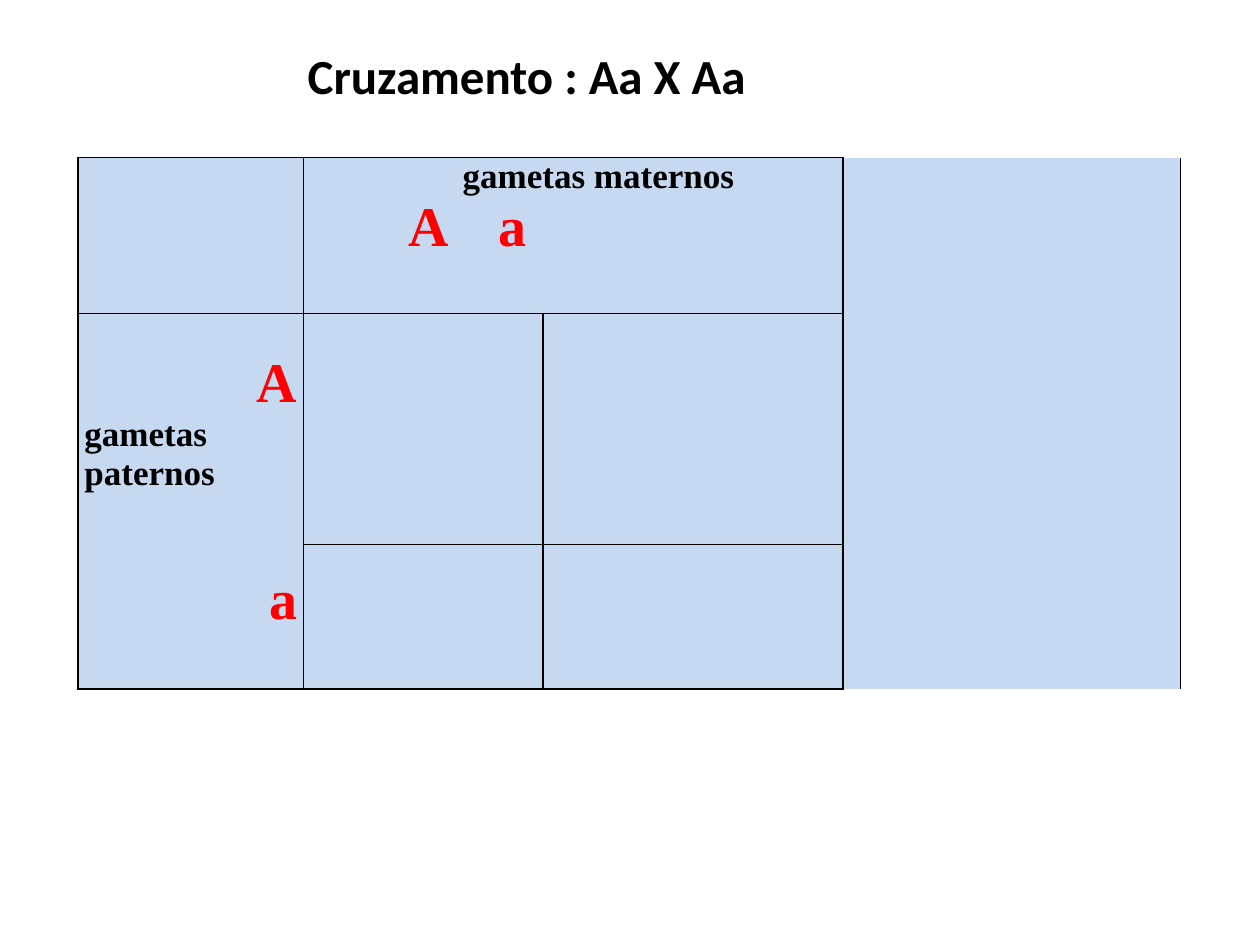
from pptx import Presentation
from pptx import util as u
from pptx.dml.color import RGBColor
from pptx.enum import text
from pptx.oxml.ns import qn
from lxml import etree

COLORS = {"ink": "000000", "allele": "FF0000", "cell": "C6D9F1"}
SERIF = "Times New Roman"
TITLE = "Cruzamento : Aa X Aa"
LABEL = dict(size=20, color="ink")
ALLELE = dict(size=32, color="allele")
LEFT, CENTER, RIGHT = text.PP_ALIGN.LEFT, text.PP_ALIGN.CENTER, text.PP_ALIGN.RIGHT

MATERNAL = [
    ("gametas maternos", dict(LABEL, align=CENTER, indent=0.4)),
    ("A\ta", dict(ALLELE, indent=0.78, tab=3.18)),
]
PATERNAL = [
    ("A", dict(ALLELE, align=RIGHT)),
    ("gametas paternos", LABEL),
    ("a", dict(ALLELE, align=RIGHT, before=44)),
]
COLUMNS = [1.79, 1.9, 2.38, 2.68]
ROWS = [1.24, 1.83, 1.15]
MERGES = [((0, 1), (0, 2)), ((0, 3), (2, 3)), ((1, 0), (2, 0))]


def write(para, words, size, color, font=SERIF, align=LEFT, indent=0, tab=None, before=0):
    para.alignment = align
    para.space_before = u.Pt(before)
    props = para._p.get_or_add_pPr()
    props.set("marL", "0")
    props.set("indent", str(u.Inches(indent)))
    if tab:
        stops = etree.SubElement(props, qn("a:tabLst"))
        etree.SubElement(stops, qn("a:tab"), pos=str(u.Inches(tab)), algn="l")
    span = para.add_run()
    span.text = words
    span.font.size = u.Pt(size)
    span.font.name = font
    span.font.bold = True
    span.font.color.rgb = RGBColor.from_string(COLORS[color])


def write_cell(cell, lines, top=0):
    cell.margin_top = u.Inches(top)
    cell.margin_bottom = 0
    cell.margin_left = cell.margin_right = u.Inches(0.05)
    frame = cell.text_frame
    for number, (words, style) in enumerate(lines):
        para = frame.add_paragraph() if number else frame.paragraphs[0]
        write(para, words, **style)


def add_borders(cell, sides):
    props = cell._tc.get_or_add_tcPr()
    for place, side in enumerate(sides):
        line = etree.Element(qn("a:ln" + side), w=str(u.Pt(1)))
        fill = etree.SubElement(line, qn("a:solidFill"))
        etree.SubElement(fill, qn("a:srgbClr"), val=COLORS["ink"])
        props.insert(place, line)


def add_title(page):
    box = page.shapes.title
    box.left, box.top, box.width, box.height = map(u.Inches, (0.86, 0.31, 6.64, 0.57))
    box.text_frame.vertical_anchor = text.MSO_ANCHOR.MIDDLE
    write(box.text_frame.paragraphs[0], TITLE, size=28, color="ink", font="Calibri", align=CENTER)


def add_cross(page):
    frame = page.shapes.add_table(
        len(ROWS), len(COLUMNS), u.Inches(0.62), u.Inches(1.25),
        u.Inches(sum(COLUMNS)), u.Inches(sum(ROWS)))
    table = frame.table
    table.first_row = table.horz_banding = False
    style = table._tbl.tblPr.find(qn("a:tableStyleId"))
    style.text = "{2D5ABB26-0587-4C30-8999-92F81FD0307C}"
    for column, width in zip(table.columns, COLUMNS):
        column.width = u.Inches(width)
    for row, height in zip(table.rows, ROWS):
        row.height = u.Inches(height)
        for index, cell in enumerate(row.cells):
            cell.fill.solid()
            cell.fill.fore_color.rgb = RGBColor.from_string(COLORS["cell"])
            add_borders(cell, "L" if index == len(COLUMNS) - 1 else "LRTB")
    for first, last in MERGES:
        table.cell(*first).merge(table.cell(*last))
    write_cell(table.cell(0, 1), MATERNAL)
    write_cell(table.cell(1, 0), PATERNAL, top=0.31)


def main():
    deck = Presentation()
    deck.slide_width, deck.slide_height = u.Inches(10), u.Inches(7.5)
    page = deck.slides.add_slide(deck.slide_layouts.get_by_name("Title Only"))
    add_title(page)
    add_cross(page)
    deck.save("out.pptx")


if __name__ == "__main__":
    main()
